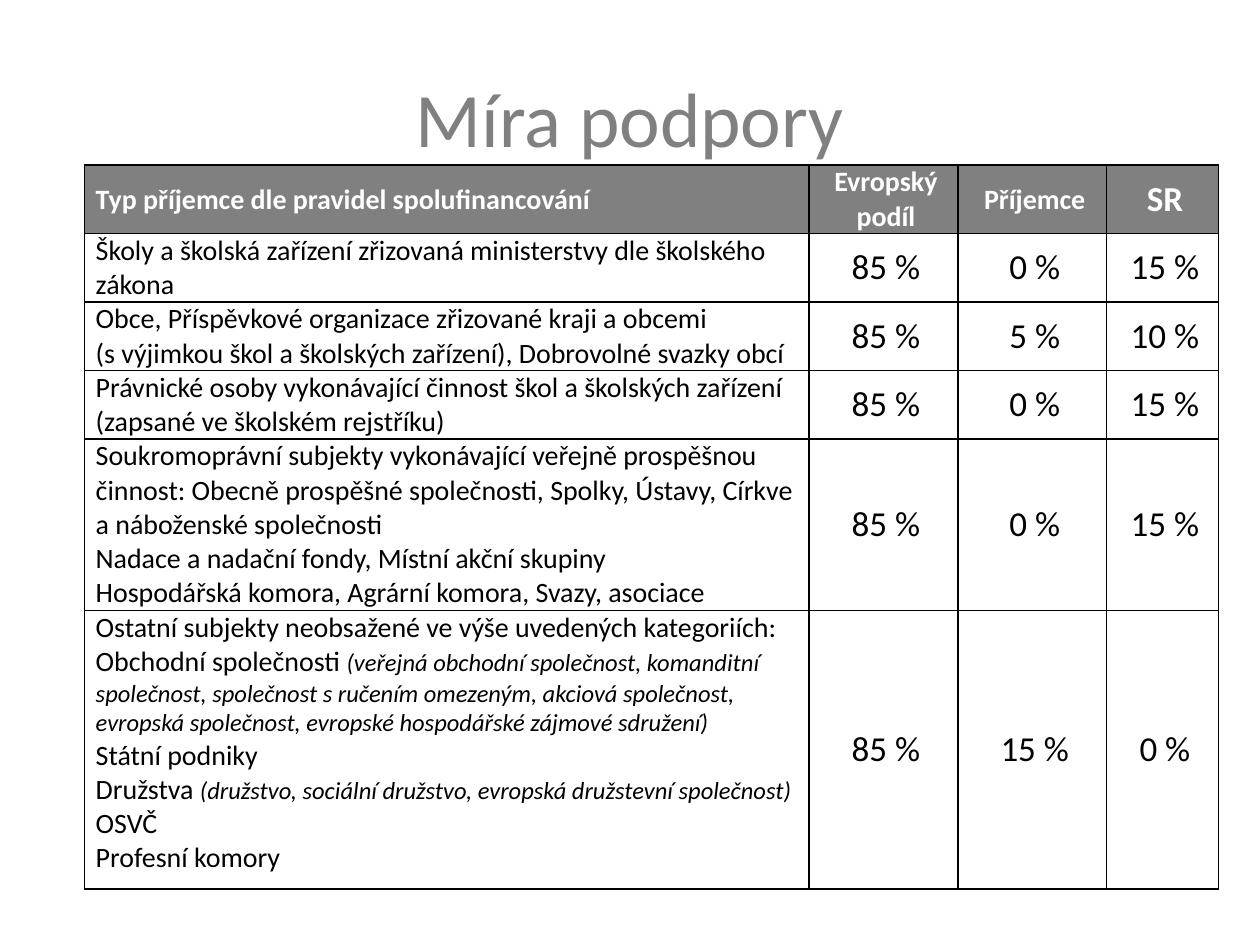
from pptx import Presentation
from pptx.util import Cm, Pt
from pptx.dml.color import RGBColor
from pptx.enum.text import PP_ALIGN, MSO_ANCHOR
from lxml.etree import fromstring

GRAY = RGBColor(0x80, 0x80, 0x80)
WHITE = RGBColor(0xFF, 0xFF, 0xFF)
BLACK = RGBColor(0, 0, 0)
FONT = "Calibri"
NS = "http://schemas.openxmlformats.org/drawingml/2006/main"

HEAD = ["Typ příjemce dle pravidel spolufinancování", "Evropský podíl", "Příjemce", "SR"]
# Each recipient: paragraphs of (text, italic note), then the three shares
ROWS = [
    ([("Školy a školská zařízení zřizovaná ministerstvy dle školského zákona", "")],
     "85 %", "0 %", "15 %"),
    ([("Obce, Příspěvkové organizace zřizované kraji a obcemi \n"
       "(s výjimkou škol a školských zařízení), Dobrovolné svazky obcí", "")],
     "85 %", "5 %", "10 %"),
    ([("Právnické osoby vykonávající činnost škol a školských zařízení "
       "(zapsané ve školském rejstříku)", "")],
     "85 %", "0 %", "15 %"),
    ([("Soukromoprávní subjekty vykonávající veřejně prospěšnou činnost: Obecně prospěšné "
       "společnosti, Spolky, Ústavy, Církve a náboženské společnosti", ""),
      ("Nadace a nadační fondy, Místní akční skupiny", ""),
      ("Hospodářská komora, Agrární komora, Svazy, asociace", "")],
     "85 %", "0 %", "15 %"),
    ([("Ostatní subjekty neobsažené ve výše uvedených kategoriích:", ""),
      ("Obchodní společnosti ",
       "(veřejná obchodní společnost, komanditní společnost, společnost s ručením omezeným, "
       "akciová společnost, evropská společnost, evropské hospodářské zájmové sdružení)"),
      ("Státní podniky", ""),
      ("Družstva ", "(družstvo, sociální družstvo, evropská družstevní společnost)"),
      ("OSVČ", ""),
      ("Profesní komory", "")],
     "85 %", "15 %", "0 %"),
]
WIDTHS = [14.61, 3, 3, 2.25]
HEIGHTS = [1.38, 1.38, 1.38, 1.38, 3.45, 5.62]


def add_run(para, text, size, color, bold=False, italic=False):
    for i, line in enumerate(text.split("\n")):
        if i:
            para.add_line_break()
        run = para.add_run()
        run.text = line
        font = run.font
        font.name, font.size = FONT, Pt(size)
        font.bold, font.italic = bold, italic
        font.color.rgb = color


def style_cell(cell):
    cell.margin_left = cell.margin_right = Cm(0.13)
    cell.margin_top = cell.margin_bottom = 0
    props = cell._tc.get_or_add_tcPr()
    for side in "LRTB":
        props.append(fromstring(
            f'<a:ln{side} xmlns:a="{NS}" w="12700"><a:solidFill>'
            f'<a:srgbClr val="{BLACK}"/></a:solidFill></a:ln{side}>'))


prs = Presentation()
prs.slide_width, prs.slide_height = Cm(25.4), Cm(19.05)
slide = prs.slides.add_slide(prs.slide_layouts[5])

# Title
title = slide.shapes.title
title.left, title.top, title.width, title.height = Cm(1.27), Cm(0.76), Cm(22.86), Cm(3.18)
frame = title.text_frame
frame.vertical_anchor = MSO_ANCHOR.MIDDLE
frame.paragraphs[0].alignment = PP_ALIGN.CENTER
add_run(frame.paragraphs[0], "Míra podpory", 44, GRAY)

# Table grid
table = slide.shapes.add_table(len(HEIGHTS), len(WIDTHS), Cm(1.7), Cm(3.33),
                               Cm(sum(WIDTHS)), Cm(sum(HEIGHTS))).table
table.first_row = table.horz_banding = False
for col, width in zip(table.columns, WIDTHS):
    col.width = Cm(width)
for row, height in zip(table.rows, HEIGHTS):
    row.height = Cm(height)

# Cells: header first, then one row per recipient type
for r, values in enumerate([HEAD] + ROWS):
    head = r == 0
    for c, value in enumerate(values):
        cell = table.cell(r, c)
        style_cell(cell)
        if head:
            cell.fill.solid()
            cell.fill.fore_color.rgb = GRAY
        else:
            cell.fill.background()
        if head or c:
            cell.vertical_anchor = MSO_ANCHOR.MIDDLE
        big = c == 3 or (c and not head)
        parts = [(value, "")] if isinstance(value, str) else value
        for i, (text, note) in enumerate(parts):
            para = cell.text_frame.add_paragraph() if i else cell.text_frame.paragraphs[0]
            para.alignment = PP_ALIGN.CENTER if c else PP_ALIGN.LEFT
            para._p.get_or_add_pPr().set("marL", str(Cm(0.1)))
            add_run(para, text, 20 if big else 16, WHITE if head else BLACK, bold=head)
            if note:
                add_run(para, note, 14, BLACK, italic=True)

prs.save("out.pptx")
